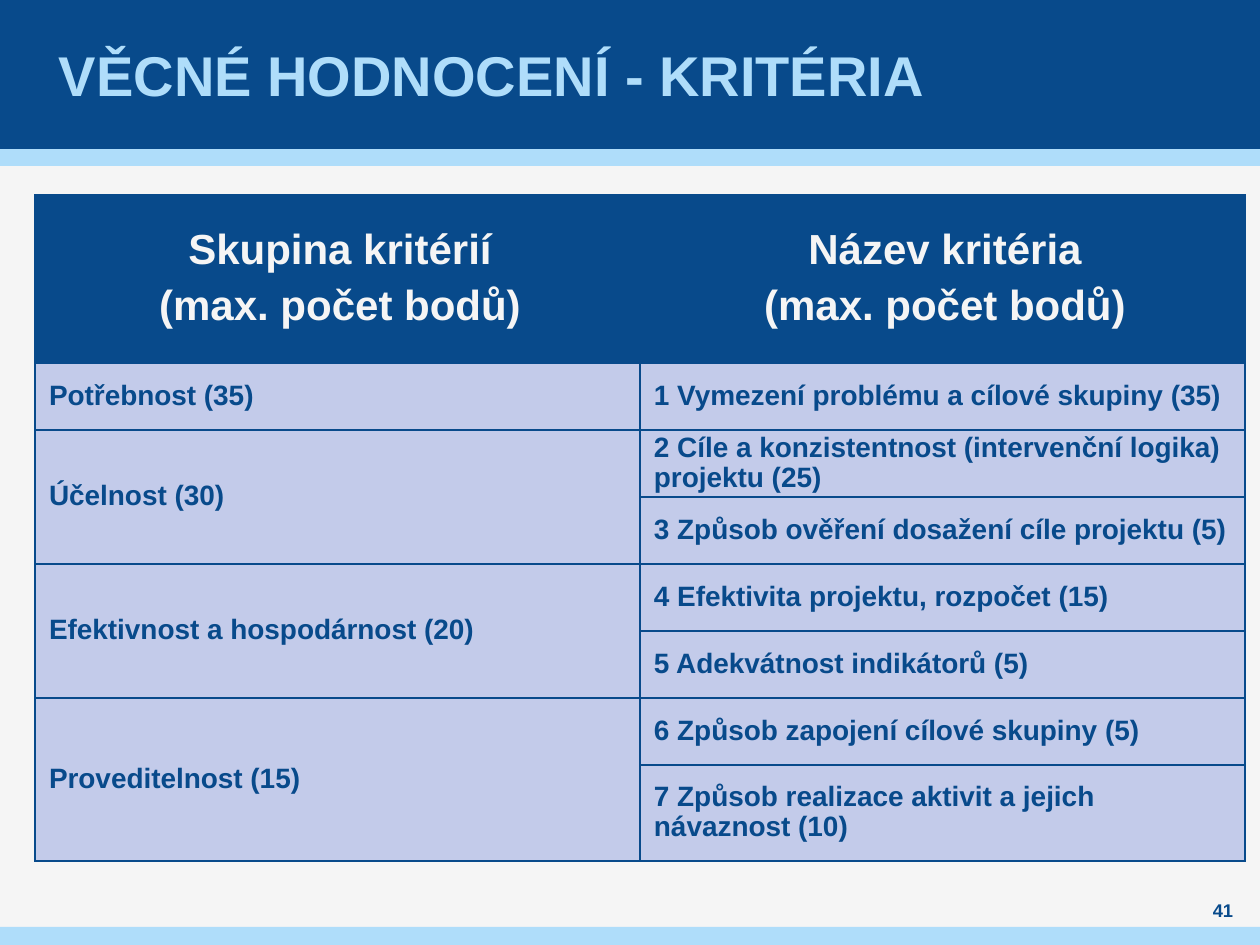
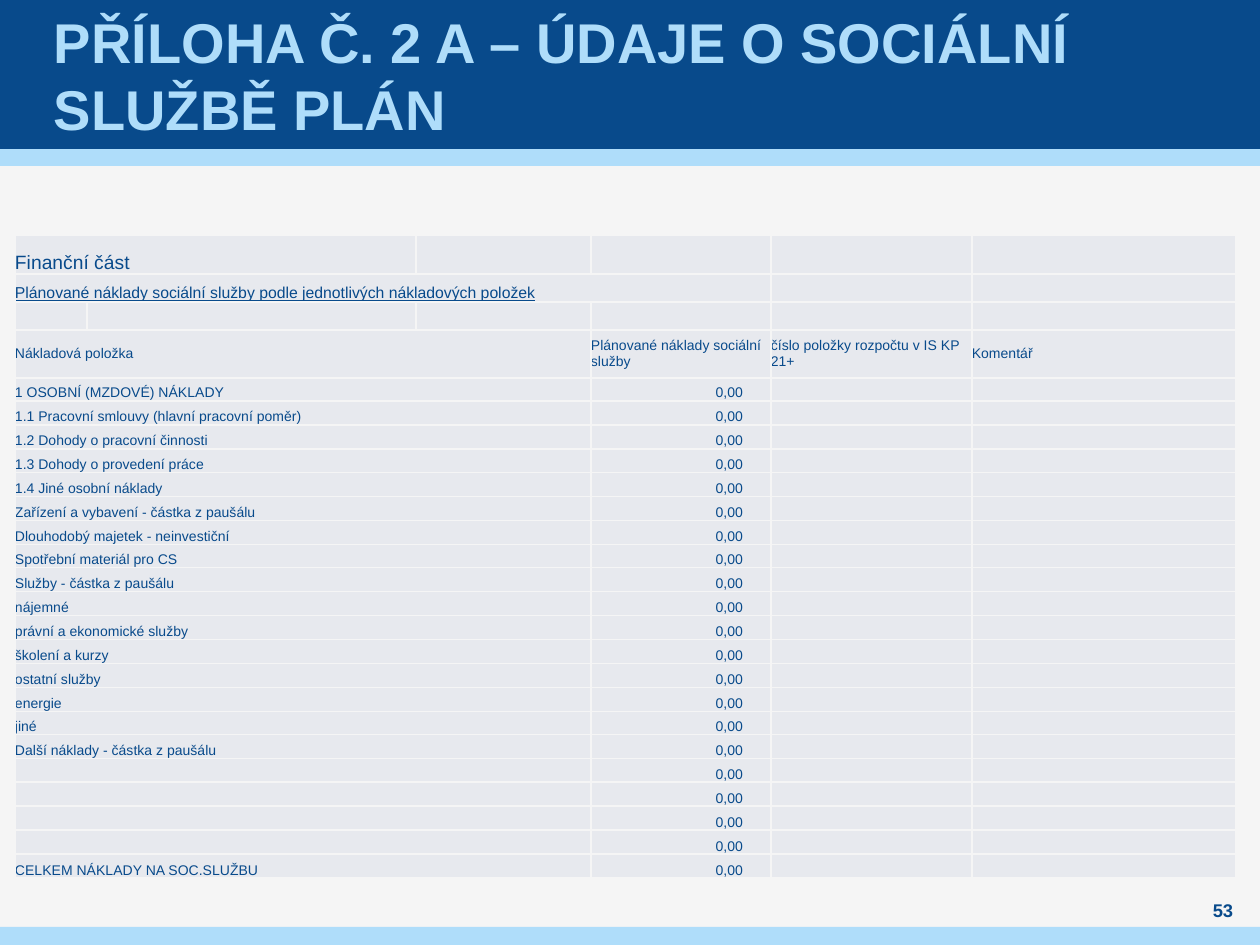
from pptx import Presentation
from pptx.dml.color import RGBColor
from pptx.enum.shapes import MSO_SHAPE as SHAPE
from pptx.enum.text import MSO_ANCHOR as ANCHOR, PP_ALIGN as ALIGN
from pptx.oxml.ns import qn
from pptx.util import Pt
from lxml.etree import SubElement

PX = 7257
NAVY, SKY, PAPER = "084A8B", "AFDDFA", "F5F5F5"
LAVENDER, GREY = "C3CBEA", "E7E9EE"


def paint(fill, color):
    fill.solid()
    fill.fore_color.rgb = RGBColor.from_string(color)


def write(tf, text, size=16, color=NAVY, bold=False, underline=False,
          align=ALIGN.LEFT, space=0, line=None, indent=0):
    for i, part in enumerate(text.split("\n")):
        p = tf.add_paragraph() if i else tf.paragraphs[0]
        p.alignment = align
        p.space_before = p.space_after = Pt(space)
        p.line_spacing = line
        p._p.get_or_add_pPr().set("marL", str(indent * PX))
        if not part:
            p._p.get_or_add_endParaRPr().set("sz", str(size * 100))
            continue
        r = p.add_run()
        r.text = part
        r.font.name = "Arial"
        r.font.size = Pt(size)
        r.font.bold = bold
        r.font.underline = underline
        paint(r.font.fill, color)


criteria = [
    ["Skupina kritérií\n(max. počet bodů)", "Název kritéria\n(max. počet bodů)"],
    ["Potřebnost (35)", "1 Vymezení problému a cílové skupiny (35)"],
    ["Účelnost (30)", "2 Cíle a konzistentnost (intervenční logika) projektu (25)"],
    ["", "3 Způsob ověření dosažení cíle projektu (5)"],
    ["Efektivnost a hospodárnost (20)", "4 Efektivita projektu, rozpočet (15)"],
    ["", "5 Adekvátnost indikátorů (5)"],
    ["Proveditelnost (15)", "6 Způsob zapojení cílové skupiny (5)"],
    ["", "7 Způsob realizace aktivit a jejich návaznost (10)"],
]
items = [
    "1 OSOBNÍ (MZDOVÉ) NÁKLADY",
    "1.1 Pracovní smlouvy (hlavní pracovní poměr)",
    "1.2 Dohody o pracovní činnosti",
    "1.3 Dohody o provedení práce",
    "1.4 Jiné osobní náklady",
    "Zařízení a vybavení - částka z paušálu",
    "Dlouhodobý majetek - neinvestiční",
    "Spotřební materiál pro CS",
    "Služby - částka z paušálu",
    "nájemné",
    "právní a ekonomické služby",
    "školení a kurzy",
    "ostatní služby",
    "energie",
    "jiné",
    "Další náklady - částka z paušálu",
    "", "", "", "",
    "CELKEM NÁKLADY NA SOC.SLUŽBU",
]
costs = [
    ["Finanční část"] + [""] * 5,
    ["Plánované náklady sociální služby podle jednotlivých nákladových položek"] + [""] * 5,
    [""] * 6,
    ["Nákladová položka", "", "", "Plánované náklady sociální služby",
     "číslo položky rozpočtu v IS KP 21+", "Komentář"],
] + [[item, "", "", "0,00", "", ""] for item in items]
n = len(items)
item_rows = [501 * (i + 1) // n - 501 * i // n for i in range(n)]

body = dict(bold=True, space=3, line=0.96, indent=5)
header = dict(body, size=24, color=PAPER, align=ALIGN.CENTER)
small = dict(size=8)

pages = [
    dict(title="VĚCNÉ HODNOCENÍ - KRITÉRIA", left=54, width=1201, number="41",
         at=(35, 195), cols=[605, 605], rows=[168] + [67] * 6 + [96],
         cells=criteria, border=NAVY, margin=9,
         fills=[NAVY] + [LAVENDER] * 7, formats=[header] + [body] * 7,
         anchors=[ANCHOR.MIDDLE] * 8,
         merges=[(r, 0, r + 1, 0) for r in (2, 4, 6)]),
    dict(title="PŘÍLOHA Č. 2 A – ÚDAJE O SOCIÁLNÍ SLUŽBĚ PLÁN", left=49, width=1160, number="53",
         at=(15, 235), cols=[72, 329, 175, 180, 201, 264], rows=[39, 28, 28, 48] + item_rows,
         cells=costs, border=PAPER, margin=0,
         fills=[GREY] * (n + 4),
         formats=[dict(size=11), dict(size=9, underline=True)] + [small] * (n + 2),
         anchors=[ANCHOR.BOTTOM] * 3 + [ANCHOR.MIDDLE] + [ANCHOR.BOTTOM] * n,
         merges=[(0, 0, 0, 1), (1, 0, 1, 3)] + [(r, 0, r, 2) for r in range(3, n + 4)]),
]

prs = Presentation()
prs.slide_width, prs.slide_height = 1260 * PX, 945 * PX

for page in pages:
    s = prs.slides.add_slide(prs.slide_layouts[6])
    paint(s.background.fill, PAPER)
    for top, height, color in [(149, 17, SKY), (0, 149, NAVY), (927, 18, SKY)]:
        sp = s.shapes.add_shape(SHAPE.RECTANGLE, 0, top * PX, 1260 * PX, height * PX)
        sp.shadow.inherit = False
        paint(sp.fill, color)
        sp.line.fill.background()

    for text, box, inset, fmt in [
        (page["title"], (page["left"], 0, page["width"], 149), 5, dict(size=32, color=SKY)),
        (page["number"], (1191, 898, 64, 25), 0, dict(size=10.5, align=ALIGN.CENTER)),
    ]:
        tf = s.shapes.add_textbox(*[v * PX for v in box]).text_frame
        tf.word_wrap = True
        tf.vertical_anchor = ANCHOR.MIDDLE
        tf.margin_left = tf.margin_right = inset * PX
        tf.margin_top = tf.margin_bottom = 0
        write(tf, text, bold=True, **fmt)

    cols, rows = page["cols"], page["rows"]
    x, y = page["at"]
    table = s.shapes.add_table(len(rows), len(cols), x * PX, y * PX,
                               sum(cols) * PX, sum(rows) * PX).table
    table.first_row = table.horz_banding = False
    for col, width in zip(table.columns, cols):
        col.width = width * PX
    for row, height in zip(table.rows, rows):
        row.height = height * PX

    for i, texts in enumerate(page["cells"]):
        for j, text in enumerate(texts):
            cell = table.cell(i, j)
            tcPr = cell._tc.get_or_add_tcPr()
            for side in ("a:lnL", "a:lnR", "a:lnT", "a:lnB"):
                ln = SubElement(tcPr, qn(side), w=str(Pt(1)))
                SubElement(SubElement(ln, qn("a:solidFill")), qn("a:srgbClr"), val=page["border"])
            paint(cell.fill, page["fills"][i])
            cell.vertical_anchor = page["anchors"][i]
            cell.margin_top = cell.margin_bottom = 0
            cell.margin_left = cell.margin_right = page["margin"] * PX
            fmt = page["formats"][i]
            if text == "0,00":
                cell.margin_right = 28 * PX
                fmt = dict(fmt, align=ALIGN.RIGHT)
            write(cell.text_frame, text, **fmt)

    for r1, c1, r2, c2 in page["merges"]:
        table.cell(r1, c1).merge(table.cell(r2, c2))

prs.save("out.pptx")
